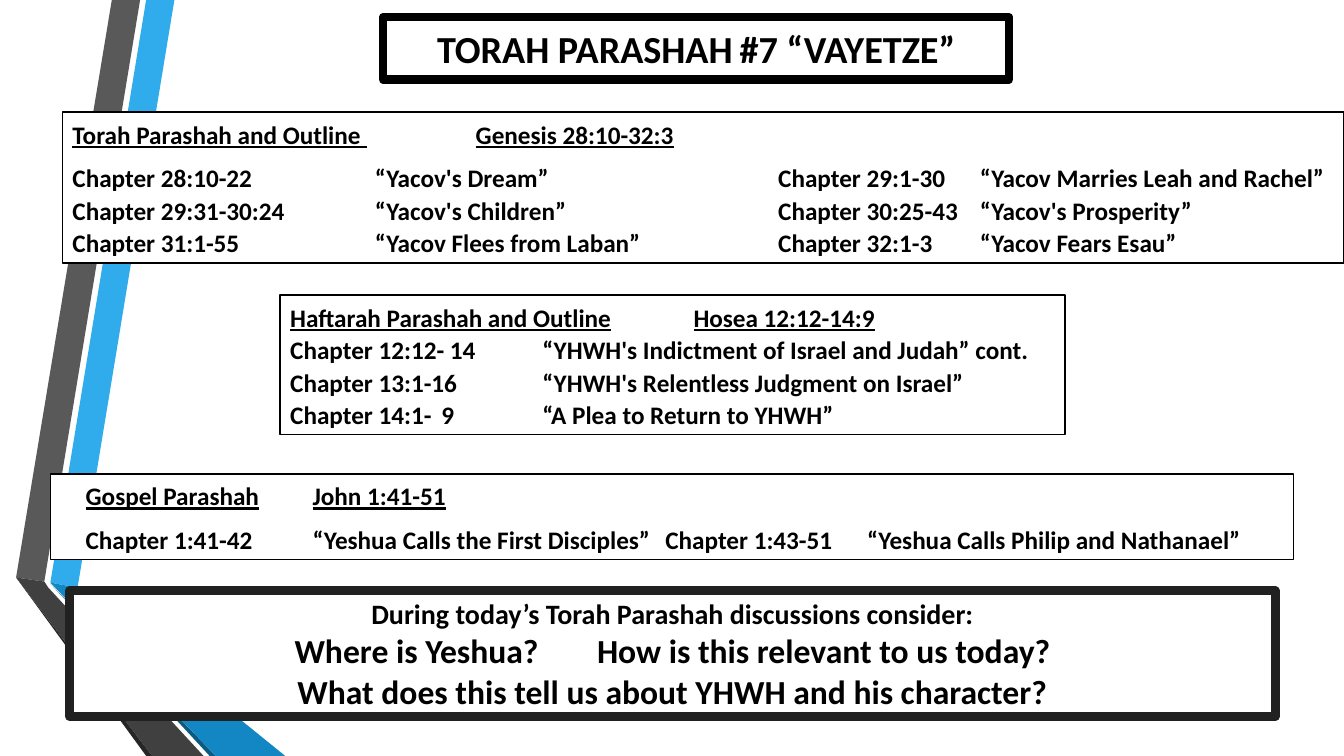
import pptx
import pptx.dml.color
import pptx.enum.shapes
import pptx.enum.text
import pptx.oxml
import pptx.oxml.ns
import pptx.util
from pptx.util import Inches

RIBBONS = [
    ("30ACEC", [(0.5, 5.78), (0.77, 5.83), (1.73, 0), (1.45, 0)]),
    ("595959", [(1.39, 0), (1.11, 0), (0.16, 5.73), (0.44, 5.77)]),
    ("262626", [(0.16, 5.73), (1.45, 7.5), (1.51, 7.5)]),
    ("0C5A82", [(0.5, 5.79), (2.08, 7.5), (2.14, 7.5)]),
    ("1287C3", [(0.5, 5.78), (2.14, 7.5), (2.83, 7.5), (0.77, 5.83)]),
    ("404040", [(2.02, 7.5), (0.48, 5.83), (0.44, 5.77), (0.16, 5.73), (1.51, 7.5)]),
]

TORAH_CHAPTERS = [
    ("Chapter 28:10-22", "“Yacov's Dream”", "Chapter 29:1-30", "“Yacov Marries Leah and Rachel”"),
    ("Chapter 29:31-30:24", "“Yacov's Children”", "Chapter 30:25-43", "“Yacov's Prosperity”"),
    ("Chapter 31:1-55", "“Yacov Flees from Laban”", "Chapter 32:1-3", "“Yacov Fears Esau”"),
]

HAFTARAH_CHAPTERS = [
    ("Chapter 12:12- 14", "“YHWH's Indictment of Israel and Judah” cont."),
    ("Chapter 13:1-16", "“YHWH's Relentless Judgment on Israel”"),
]

GOSPEL_CHAPTERS = ("Chapter 1:41-42", "“Yeshua Calls the First Disciples”",
                   "Chapter 1:43-51", "“Yeshua Calls Philip and Nathanael”")


def color(hex_string):
    return pptx.dml.color.RGBColor.from_string(hex_string)


def add_ribbon(page, fill, points):
    corners = [(Inches(x), Inches(y)) for x, y in points]
    builder = page.shapes.build_freeform(*corners[0])
    builder.add_line_segments(corners[1:], close=True)
    ribbon = builder.convert_to_shape()
    ribbon.shadow.inherit = False
    ribbon.fill.solid()
    ribbon.fill.fore_color.rgb = color(fill)
    ribbon.line.fill.background()


def add_box(page, left, top, width, height, line_width, line_color="000000", inset=0.1):
    box = page.shapes.add_shape(pptx.enum.shapes.MSO_SHAPE.RECTANGLE,
                                Inches(left), Inches(top), Inches(width), Inches(height))
    box.shadow.inherit = False
    box.fill.solid()
    box.fill.fore_color.rgb = color("FFFFFF")
    box.line.color.rgb = color(line_color)
    box.line.width = pptx.util.Pt(line_width)
    frame = box.text_frame
    frame.word_wrap = True
    frame.margin_left = Inches(inset)
    frame.vertical_anchor = pptx.enum.text.MSO_ANCHOR.MIDDLE
    return frame


def set_tab_stops(para, stops):
    tab_list = pptx.oxml.parse_xml(f"<a:tabLst {pptx.oxml.ns.nsdecls('a')}/>")
    for stop in stops:
        tab = tab_list.makeelement(pptx.oxml.ns.qn("a:tab"), {"pos": str(Inches(stop)), "algn": "l"})
        tab_list.append(tab)
    para._p.get_or_add_pPr().append(tab_list)


def add_run(para, text, size, underline=False):
    span = para.add_run()
    span.text = text
    span.font.name = "Calibri"
    span.font.size = pptx.util.Pt(size)
    span.font.bold = True
    span.font.underline = underline
    span.font.color.rgb = color("000000")


def add_line(frame, columns, stops=(), size=18, underline=False, centered=False, space_after=0):
    """Write one paragraph whose columns are parted by tabs at the given stops."""
    para = frame.paragraphs[0]
    if para.runs:
        para = frame.add_paragraph()
    align = pptx.enum.text.PP_ALIGN
    para.alignment = align.CENTER if centered else align.LEFT
    para.line_spacing = 1.0 if centered else 1.07
    para.space_after = pptx.util.Pt(space_after)
    if stops:
        set_tab_stops(para, stops)
    for index, text in enumerate(columns):
        if index:
            add_run(para, "\t", size)
        add_run(para, text, size, underline)


def main():
    deck = pptx.Presentation()
    deck.slide_width, deck.slide_height = Inches(13.33), Inches(7.5)
    page = deck.slides.add_slide(deck.slide_layouts[6])

    for fill, points in RIBBONS:
        add_ribbon(page, fill, points)

    title = add_box(page, 3.8, 0.17, 6.21, 0.62, 6)
    add_line(title, ("TORAH PARASHAH", "#7 “VAYETZE”"), [3], 27.3, centered=True)

    torah = add_box(page, 0.62, 1.11, 12.71, 1.5, 1.25)
    add_line(torah, ("Torah Parashah and Outline ", "Genesis 28:10-32:3"), [4],
             underline=True, space_after=8)
    for chapters in TORAH_CHAPTERS:
        add_line(torah, chapters, [3, 7, 9])

    haftarah = add_box(page, 2.78, 2.93, 7.78, 1.38, 1.25)
    add_line(haftarah, ("Haftarah Parashah and Outline", "Hosea 12:12-14:9"), [4], underline=True)
    for chapters in HAFTARAH_CHAPTERS:
        add_line(haftarah, chapters, [2.5])
    add_line(haftarah, ("Chapter 14:1-", "9", "“A Plea to Return to YHWH”"), [1.5, 2.5])

    gospel = add_box(page, 0.5, 4.7, 12.33, 0.85, 1.25, inset=0.35)
    add_line(gospel, ("Gospel Parashah", "John 1:41-51"), [2.25], underline=True, space_after=8)
    add_line(gospel, GOSPEL_CHAPTERS, [2.25, 5.75, 7.75])

    questions = add_box(page, 0.69, 5.86, 11.96, 1.25, 6, "212121")
    add_line(questions, ["During today’s Torah Parashah discussions consider:"], size=20, centered=True)
    add_line(questions, ("Where is Yeshua?", "How is this relevant to us today?"), [3], 24, centered=True)
    add_line(questions, ["What does this tell us about YHWH and his character?"], size=24, centered=True)

    deck.save("out.pptx")


if __name__ == "__main__":
    main()
